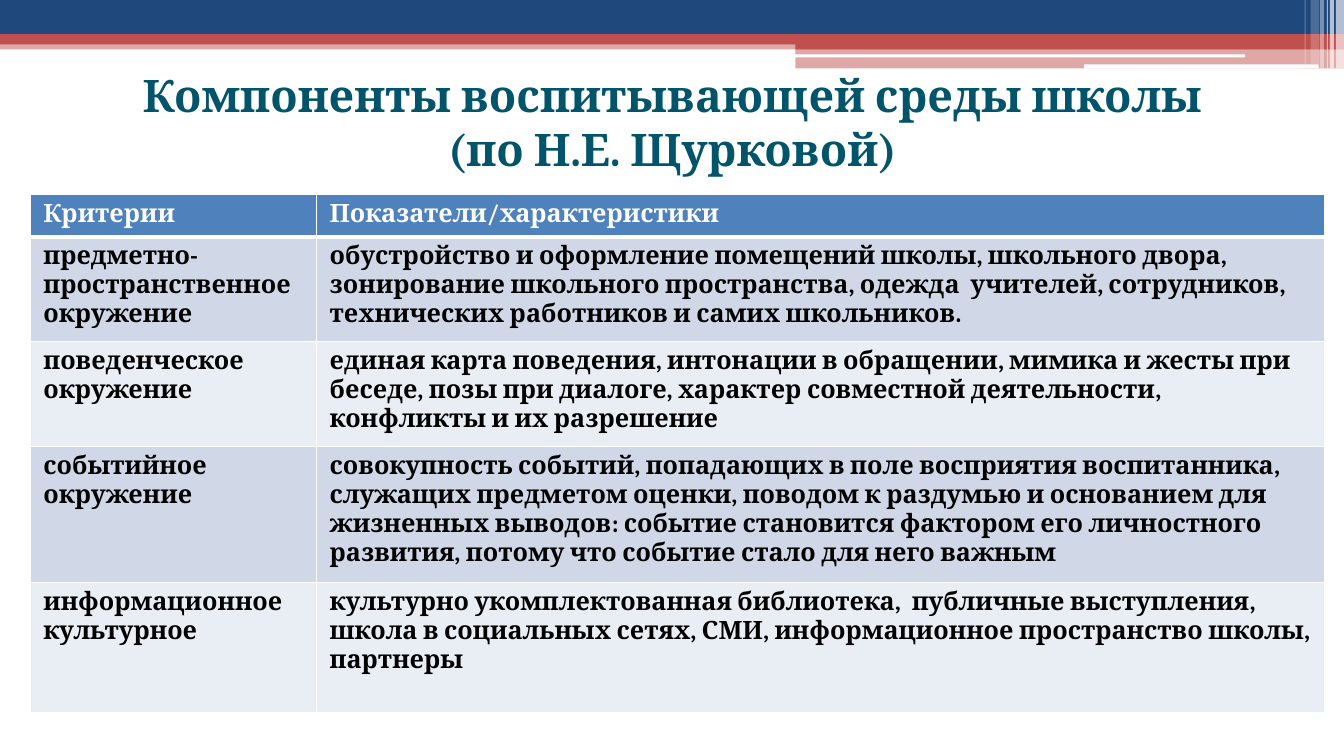
import pptx
import pptx.util
import pptx.dml.color
import pptx.enum.shapes
import pptx.enum.text
import pptx.oxml
import pptx.oxml.ns
from pptx.util import Inches

FONT = "Cambria"
NAVY, RED, WHITE = "1F497D", "C0504D", "FFFFFF"
TEAL, BLACK = "02546A", "000000"
HEADER_FILL, BAND_FILLS = "4F81BD", ("D0D8E8", "E9EDF4")

TITLE_LINES = ["Компоненты воспитывающей среды школы", "(по Н.Е. Щурковой)"]
COL_WIDTHS = [2.84, 10]
ROW_HEIGHTS = [0.42, 1.04, 1.04, 1.35, 1.29]
ROWS = [
    ("Критерии", "Показатели/характеристики"),
    ("предметно-пространственное окружение",
     "обустройство и оформление помещений школы, школьного двора, "
     "зонирование школьного пространства, одежда  учителей, сотрудников, "
     "технических работников и самих школьников."),
    ("поведенческое окружение",
     "единая карта поведения, интонации в обращении, мимика и жесты при "
     "беседе, позы при диалоге, характер совместной деятельности, "
     "конфликты и их разрешение"),
    ("событийное\nокружение",
     "совокупность событий, попадающих в поле восприятия воспитанника, "
     "служащих предметом оценки, поводом к раздумью и основанием для "
     "жизненных выводов: событие становится фактором его личностного "
     "развития, потому что событие стало для него важным"),
    ("информационное культурное",
     "культурно укомплектованная библиотека,  публичные выступления, "
     "школа в социальных сетях, СМИ, информационное пространство школы, "
     "партнеры"),
]


def rgb(color):
    return pptx.dml.color.RGBColor.from_string(color)


def add_run(p, text, size, color):
    r = p.add_run()
    r.text = text
    r.font.name, r.font.size, r.font.bold = FONT, pptx.util.Pt(size), True
    r.font.color.rgb = rgb(color)


def add_bar(s, left, top, width, height, color, opacity=100, rounded=False):
    shapes = pptx.enum.shapes.MSO_SHAPE
    kind = shapes.ROUNDED_RECTANGLE if rounded else shapes.RECTANGLE
    sp = s.shapes.add_shape(kind, Inches(left), Inches(top), Inches(width), Inches(height))
    sp.shadow.inherit = False
    sp.line.fill.background()
    sp.fill.solid()
    sp.fill.fore_color.rgb = rgb(color)
    if opacity < 100:
        clr = sp._element.spPr.find(".//" + pptx.oxml.ns.qn("a:srgbClr"))
        clr.append(pptx.oxml.parse_xml(
            f'<a:alpha {pptx.oxml.ns.nsdecls("a")} val="{opacity * 1000}"/>'))


def add_banner(s, left, top, width):
    # Full-width bands
    add_bar(s, left, top + 0.4, width, 0.09, RED, 50)
    add_bar(s, left, top, width, 0.34, NAVY)
    add_bar(s, left, top + 0.34, width, 0.1, RED)
    # Step on the right with white cut-outs
    right = left + width
    add_bar(s, right - 5.44, top + 0.39, 5.44, 0.1, RED)
    add_bar(s, right - 5.44, top + 0.48, 5.44, 0.2, RED, 50)
    add_bar(s, right - 5.45, top + 0.54, 4.47, 0.03, WHITE, rounded=True)
    add_bar(s, right - 2.58, top + 0.64, 2.33, 0.04, WHITE, rounded=True)
    # Translucent vertical stripes: distance from the right edge, width, height, opacity
    for offset, w, h, opacity in [(0.08, 0.08, 0.68, 65), (0.14, 0.04, 0.68, 65),
                                  (0.17, 0.01, 0.68, 60), (0.24, 0.04, 0.68, 40),
                                  (0.33, 0.08, 0.64, 20), (0.39, 0.01, 0.64, 30)]:
        add_bar(s, right - offset, top, w, h, WHITE, opacity)


def add_title(s, left, top, width, height):
    box = s.shapes.add_textbox(Inches(left), Inches(top), Inches(width), Inches(height))
    tf = box.text_frame
    tf.word_wrap = True
    tf.vertical_anchor = pptx.enum.text.MSO_ANCHOR.MIDDLE
    p = tf.paragraphs[0]
    p.alignment = pptx.enum.text.PP_ALIGN.CENTER
    for i, line in enumerate(TITLE_LINES):
        if i:
            p.add_line_break()
        add_run(p, line, 32, TEAL)


def set_borders(cell, widths):
    tc_pr = cell._tc.get_or_add_tcPr()
    for i, (side, width) in enumerate(widths.items()):
        ln = pptx.oxml.parse_xml(
            f'<a:{side} {pptx.oxml.ns.nsdecls("a")} w="{pptx.util.Pt(width)}">'
            f'<a:solidFill><a:srgbClr val="{WHITE}"/></a:solidFill></a:{side}>')
        tc_pr.insert(i, ln)


def add_criteria_table(s, left, top):
    frame = s.shapes.add_table(len(ROWS), len(COL_WIDTHS), Inches(left), Inches(top),
                               Inches(sum(COL_WIDTHS)), Inches(sum(ROW_HEIGHTS)))
    table = frame.table
    for column, width in zip(table.columns, COL_WIDTHS):
        column.width = Inches(width)
    for i, (texts, height) in enumerate(zip(ROWS, ROW_HEIGHTS)):
        table.rows[i].height = Inches(height)
        for j, text in enumerate(texts):
            cell = table.cell(i, j)
            cell.margin_left = cell.margin_right = Inches(0.13)
            cell.margin_top = cell.margin_bottom = Inches(0.05)
            cell.fill.solid()
            cell.fill.fore_color.rgb = rgb(BAND_FILLS[(i - 1) % 2] if i else HEADER_FILL)
            # Thick rule between the header and the body
            set_borders(cell, {"lnL": 1, "lnR": 1, "lnT": 3 if i == 1 else 1,
                               "lnB": 1 if i else 3})
            tf = cell.text_frame
            for k, line in enumerate(text.split("\n")):
                p = tf.add_paragraph() if k else tf.paragraphs[0]
                add_run(p, line, 18, BLACK if i else WHITE)


def main():
    prs = pptx.Presentation()
    prs.slide_width, prs.slide_height = Inches(13.33), Inches(7.5)
    s = prs.slides.add_slide(prs.slide_layouts[6])
    add_banner(s, 0, 0, 13.33)
    add_title(s, 0.67, 0.53, 12, 1.36)
    add_criteria_table(s, 0.3, 1.93)
    prs.save("out.pptx")


if __name__ == "__main__":
    main()
